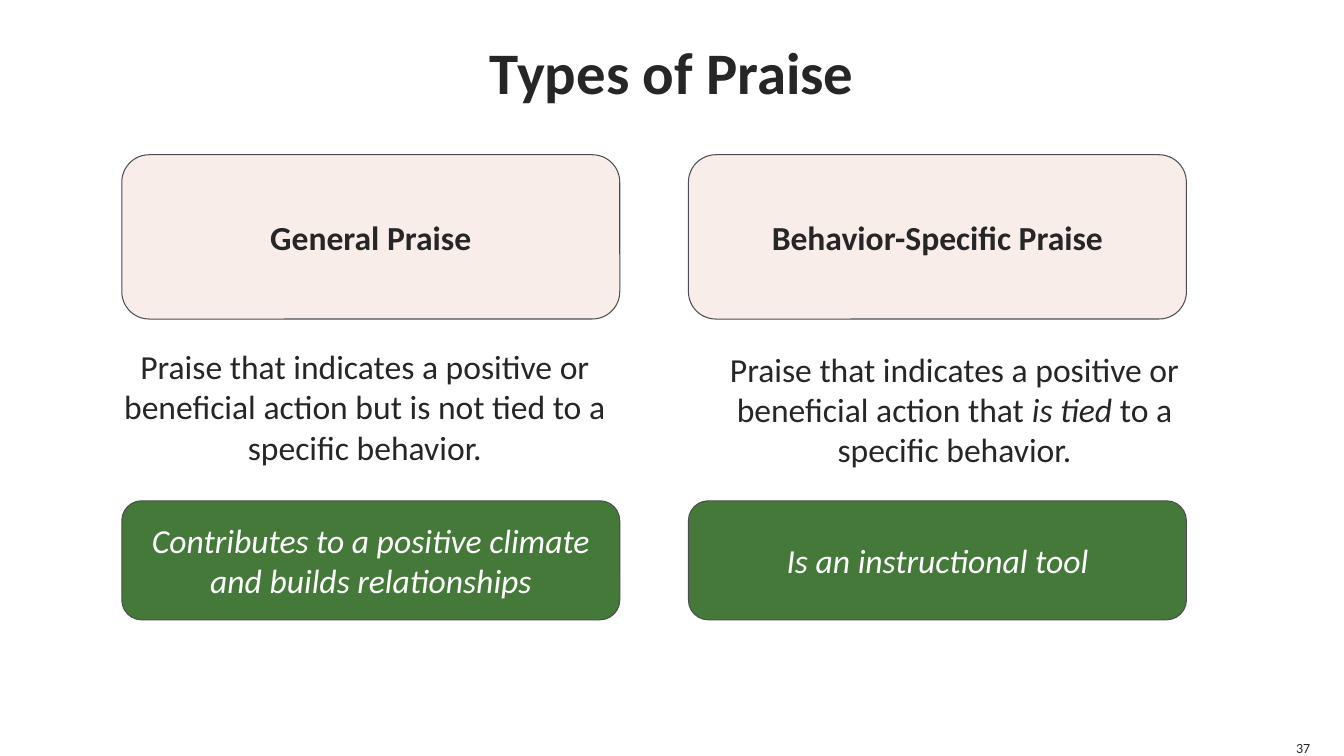
import pptx
import pptx.util
import pptx.dml.color
import pptx.enum.shapes
import pptx.enum.text

Cm = pptx.util.Cm
Pt = pptx.util.Pt
RGBColor = pptx.dml.color.RGBColor
ALIGN = pptx.enum.text.PP_ALIGN
ANCHOR = pptx.enum.text.MSO_ANCHOR

INK = RGBColor(0x26, 0x26, 0x26)
WHITE = RGBColor(0xFF, 0xFF, 0xFF)
OUTLINE = RGBColor(0x4D, 0x4D, 0x4F)
BLUSH = RGBColor(0xF9, 0xED, 0xEA)
GREEN = RGBColor(0x44, 0x79, 0x39)

BODY = {"size": Pt(24), "name": "Calibri", "bold": False, "italic": False}
TITLE = BODY | {"size": Pt(42), "bold": True}
HEADING = BODY | {"bold": True}
EMPHASIS = BODY | {"italic": True}
NUMBER = BODY | {"size": Pt(10)}
NO_INSETS = dict.fromkeys(
    ("margin_left", "margin_top", "margin_right", "margin_bottom"), 0)

# Left and width of each column, then the box of its definition
COLUMNS = [
    {
        "box": (3.07, 3.9, 12.55),
        "heading": "General Praise",
        "definition": [("Praise that indicates a positive or beneficial action "
                        "but is not tied to a specific behavior.", BODY)],
        "definition_box": (-0.3, 4.69, 12.85),
        "purpose": "Contributes to a positive climate and builds relationships",
    },
    {
        "box": (17.35, 3.9, 12.55),
        "heading": "Behavior-Specific Praise",
        "definition": [("Praise that indicates a positive or beneficial action that ", BODY),
                       ("is tied ", EMPHASIS),
                       ("to a specific behavior.", BODY)],
        "definition_box": (0, 4.76, 13.41),
        "purpose": "Is an instructional tool",
    },
]


def set_attributes(target, values):
    for name, value in values.items():
        setattr(target, name, value)


def write_text(shape, runs, color=INK, alignment=ALIGN.CENTER, **frame_format):
    frame = shape.text_frame
    set_attributes(frame, {"word_wrap": True} | frame_format)
    paragraph = frame.paragraphs[0]
    paragraph.alignment = alignment
    for text, font_format in runs:
        run = paragraph.add_run()
        run.text = text
        set_attributes(run.font, font_format)
        run.font.color.rgb = color


def add_card(slide, left, top, width, height, fill, runs, color):
    card = slide.shapes.add_shape(
        pptx.enum.shapes.MSO_SHAPE.ROUNDED_RECTANGLE,
        Cm(left), Cm(top), Cm(width), Cm(height))
    card.shadow.inherit = False
    card.fill.solid()
    card.fill.fore_color.rgb = fill
    card.line.color.rgb = OUTLINE
    card.line.width = Pt(0.75)
    write_text(card, runs, color, vertical_anchor=ANCHOR.MIDDLE)


def add_title(slide, left, top, width, height):
    title = slide.shapes.title
    set_attributes(title, {"left": Cm(left), "top": Cm(top),
                           "width": Cm(width), "height": Cm(height)})
    write_text(title, [("Types of Praise", TITLE)],
               vertical_anchor=ANCHOR.MIDDLE, **NO_INSETS)


def add_praise_column(slide, column):
    left, top, width = column["box"]
    # Heading card
    add_card(slide, left, top, width, 4.14, BLUSH,
             [(column["heading"], HEADING)], INK)
    # Definition
    shift, drop, text_width = column["definition_box"]
    definition = slide.shapes.add_textbox(
        Cm(left + shift), Cm(top + drop), Cm(text_width), Cm(3.33))
    write_text(definition, column["definition"])
    # Purpose card
    add_card(slide, left, top + 8.72, width, 3, GREEN,
             [(column["purpose"], EMPHASIS)], WHITE)


def add_slide_number(slide, left, top, width, height):
    number = slide.shapes.add_textbox(Cm(left), Cm(top), Cm(width), Cm(height))
    write_text(number, [("37", NUMBER)], alignment=ALIGN.RIGHT,
               vertical_anchor=ANCHOR.BOTTOM, **NO_INSETS | {"word_wrap": False})


def main():
    presentation = pptx.Presentation()
    presentation.slide_width = Cm(33.87)
    presentation.slide_height = Cm(19.05)
    slide = presentation.slides.add_slide(presentation.slide_layouts[5])
    add_title(slide, 1.27, 0, 31.32, 3.56)
    for column in COLUMNS:
        add_praise_column(slide, column)
    add_slide_number(slide, 32.59, 18.62, 0.43, 0.43)
    presentation.save("out.pptx")


if __name__ == "__main__":
    main()
